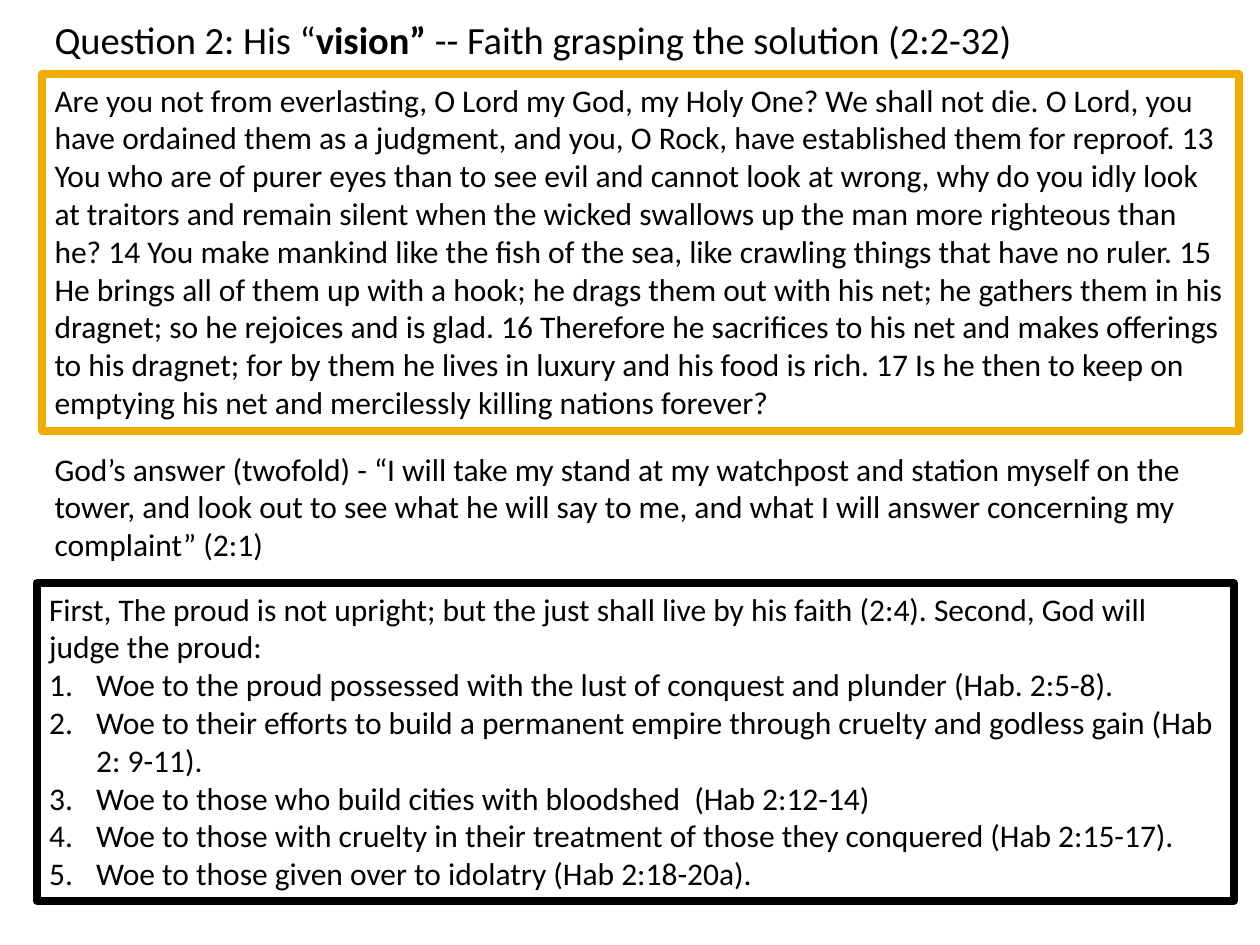
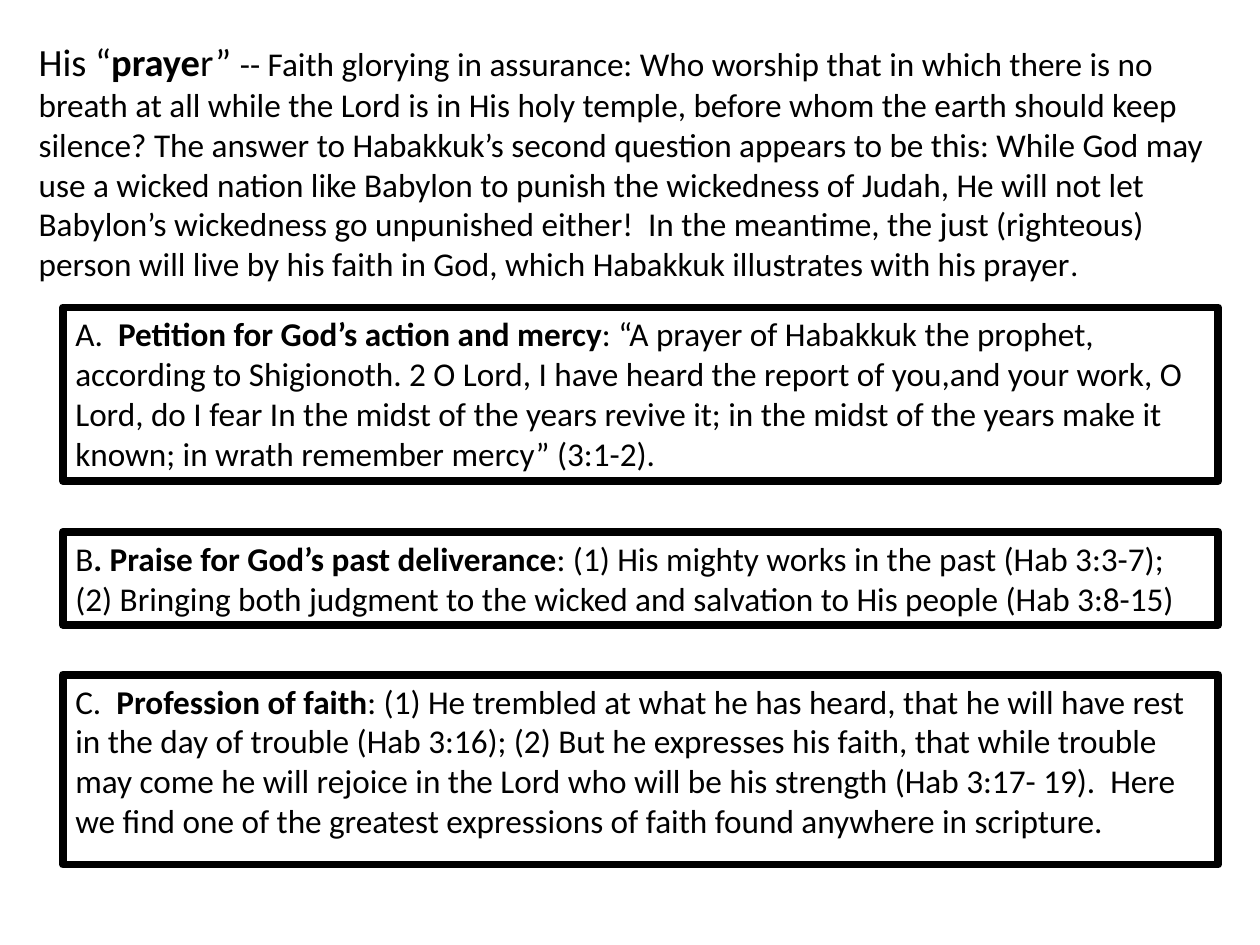
import pptx
import pptx.dml.color
import pptx.enum.text
import pptx.oxml
import pptx.util
from lxml import etree

Cm = pptx.util.Cm
Pt = pptx.util.Pt

BLACK = pptx.dml.color.RGBColor(0x00, 0x00, 0x00)
GOLD = pptx.dml.color.RGBColor(0xF0, 0xAD, 0x00)
FONT = "Calibri"
HEADING, BODY, PRAYER = Pt(22), Pt(18), Pt(19)
LIST_INDENT = Cm(0.95)


def add_passage(slide, left, top, width, height, paragraphs, border=None, wrap=True):
    """Add a text block; each paragraph is a list of (text, size, bold) runs."""
    passage = slide.shapes.add_textbox(Cm(left), Cm(top), Cm(width), Cm(height))
    frame = passage.text_frame
    frame.word_wrap = wrap
    frame.auto_size = pptx.enum.text.MSO_AUTO_SIZE.SHAPE_TO_FIT_TEXT
    for number, pieces in enumerate(paragraphs):
        paragraph = frame.add_paragraph() if number else frame.paragraphs[0]
        for text, size, bold in pieces:
            run = paragraph.add_run()
            run.text = text
            run.font.name = FONT
            run.font.size = size
            run.font.bold = bold
            run.font.color.rgb = BLACK
    if border is not None:
        passage.line.color.rgb = border
        passage.line.width = Pt(4.5)
        etree.SubElement(passage.line._get_or_add_ln(), pptx.oxml.ns.qn("a:round"))
    return passage


def number_paragraph(paragraph):
    properties = paragraph._p.get_or_add_pPr()
    properties.set("marL", str(LIST_INDENT))
    properties.set("indent", str(-LIST_INDENT))
    numbering = etree.SubElement(properties, pptx.oxml.ns.qn("a:buAutoNum"))
    numbering.set("type", "arabicPeriod")


deck = pptx.Presentation()
deck.slide_width = Cm(25.4)
deck.slide_height = Cm(19.05)
blank = deck.slide_layouts[6]

# Slide 1: the vision
vision = deck.slides.add_slide(blank)
LEFT, WIDTH = 0.85, 24.13

add_passage(vision, LEFT, 0.2, 20.5, 1.2, [[
    ("Question 2: His “", HEADING, False),
    ("vision”", HEADING, True),
    (" -- Faith grasping the solution (2:2-32)", HEADING, False),
]], wrap=False)

complaint = (
    "Are you not from everlasting, O Lord my God, my Holy One? We shall not die. "
    "O Lord, you have ordained them as a judgment, and you, O Rock, have established "
    "them for reproof. 13 You who are of purer eyes than to see evil and cannot look "
    "at wrong, why do you idly look at traitors and remain silent when the wicked "
    "swallows up the man more righteous than he? 14 You make mankind like the fish of "
    "the sea, like crawling things that have no ruler. 15 He brings all of them up "
    "with a hook; he drags them out with his net; he gathers them in his dragnet; so "
    "he rejoices and is glad. 16 Therefore he sacrifices to his net and makes "
    "offerings to his dragnet; for by them he lives in luxury and his food is rich. "
    "17 Is he then to keep on emptying his net and mercilessly killing nations forever?"
)
add_passage(vision, LEFT, 1.5, WIDTH, 7.19, [[(complaint, BODY, False)]], GOLD)

answer = (
    "God’s answer (twofold) - “I will take my stand at my watchpost and station myself "
    "on the tower, and look out to see what he will say to me, and what I will answer "
    "concerning my complaint” (2:1)"
)
add_passage(vision, LEFT, 8.94, WIDTH, 2.57, [[(answer, BODY, False)]])

judgment = [
    "First, The proud is not upright; but the just shall live by his faith (2:4). "
    "Second, God will judge the proud:",
    "Woe to the proud possessed with the lust of conquest and plunder (Hab. 2:5-8).",
    "Woe to their efforts to build a permanent empire through cruelty and godless gain "
    "(Hab 2: 9-11).",
    "Woe to those who build cities with bloodshed  (Hab 2:12-14)",
    "Woe to those with cruelty in their treatment of those they conquered (Hab 2:15-17).",
    "Woe to those given over to idolatry (Hab 2:18-20a).",
]
woes = add_passage(vision, 0.74, 11.76, WIDTH, 6.4,
                   [[(line, BODY, False)] for line in judgment], BLACK)
for woe in woes.text_frame.paragraphs[1:]:
    number_paragraph(woe)

# Slide 2: the prayer
prayer = deck.slides.add_slide(blank)

add_passage(prayer, 0.53, 0.64, 24.33, 5.26, [[
    ("His “", HEADING, False),
    ("praye", HEADING, True),
    ("r” ", HEADING, False),
    ("-- Faith glorying in assurance: Who worship that in which there is no breath at "
     "all while the Lord is in His holy temple, before whom the earth should keep "
     "silence? The answer to Habakkuk’s second question appears to be this: While God "
     "may use a wicked nation like Babylon to punish the wickedness of Judah, He will "
     "not let Babylon’s wickedness go unpunished either!  In the meantime, the just "
     "(righteous) person will live by his faith in God, which Habakkuk illustrates "
     "with his prayer", PRAYER, False),
    (".", BODY, False),
]])

# top, height, letter, heading, text
prayer_parts = [
    (6.2, 3.5, "A.  ", "Petition for God’s action and mercy",
     ": “A prayer of Habakkuk the prophet, according to Shigionoth. 2 O Lord, I have "
     "heard the report of you,and your work, O Lord, do I fear In the midst of the "
     "years revive it; in the midst of the years make it known; in wrath remember "
     "mercy” (3:1-2)."),
    (10.72, 1.88, "B", ". Praise for God’s past deliverance",
     ": (1) His mighty works in the past (Hab 3:3-7); (2) Bringing both judgment to "
     "the wicked and salvation to His people (Hab 3:8-15)"),
    (13.6, 3.83, "C.  ", "Profession of faith",
     ": (1) He trembled at what he has heard, that he will have rest in the day of "
     "trouble (Hab 3:16); (2) But he expresses his faith, that while trouble may come "
     "he will rejoice in the Lord who will be his strength (Hab 3:17- 19).  Here we "
     "find one of the greatest expressions of faith found anywhere in scripture."),
]
for top, height, letter, heading, text in prayer_parts:
    part = add_passage(prayer, 1.27, top, 23.29, height, [[
        (letter, PRAYER, False), (heading, PRAYER, True), (text, PRAYER, False),
    ]], BLACK)
    part.text_frame.auto_size = pptx.enum.text.MSO_AUTO_SIZE.NONE

deck.save("out.pptx")
